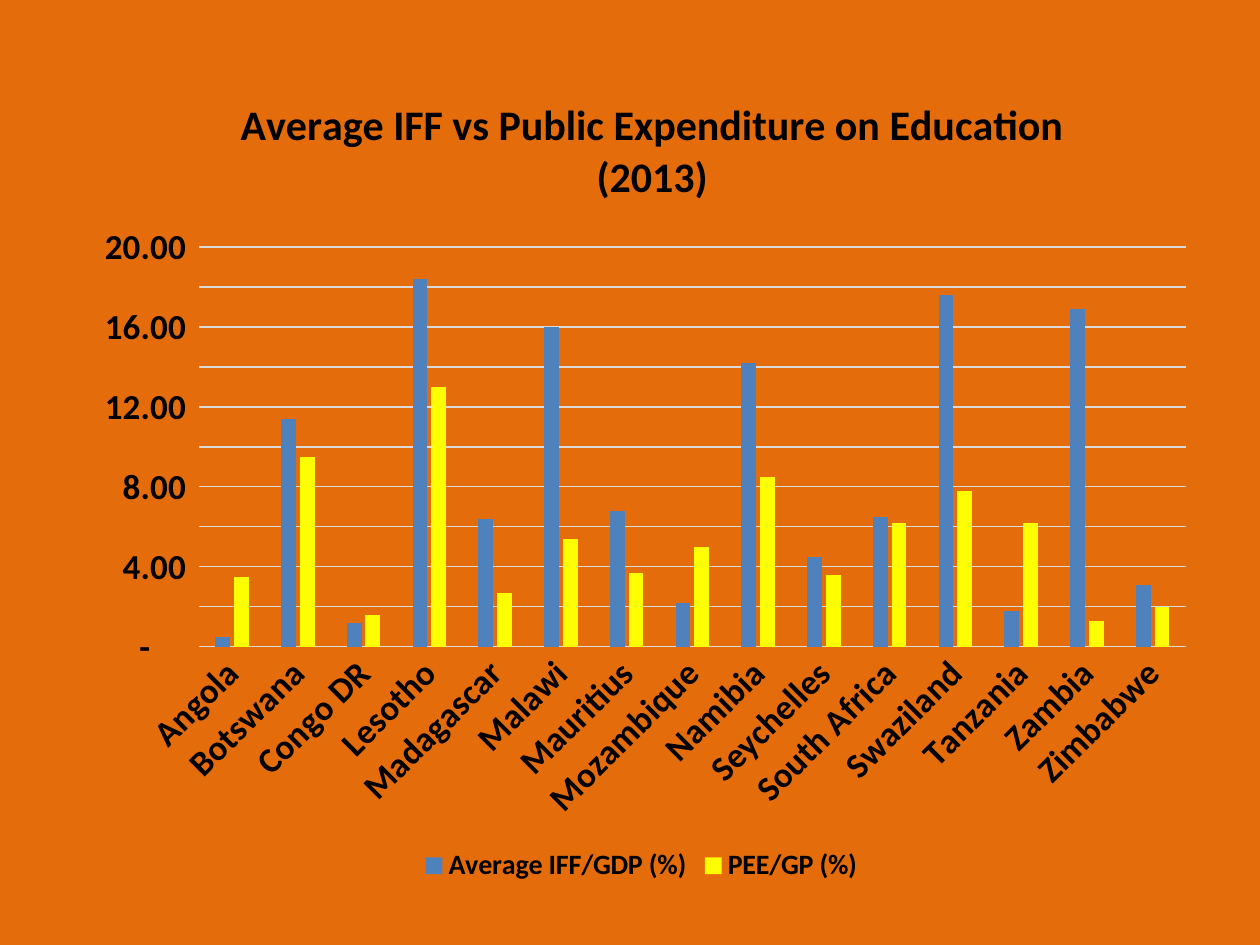
from lxml import etree
from pptx import Presentation
from pptx.chart.data import CategoryChartData
from pptx.dml.color import RGBColor
from pptx.enum.chart import XL_CHART_TYPE, XL_LEGEND_POSITION, XL_TICK_MARK
from pptx.oxml.ns import qn
from pptx.util import Cm, Pt

COLUMN_CLUSTERED = XL_CHART_TYPE.COLUMN_CLUSTERED
BOTTOM = XL_LEGEND_POSITION.BOTTOM
NO_TICK = XL_TICK_MARK.NONE

ORANGE = RGBColor(0xE4, 0x6C, 0x0A)
BLACK = RGBColor(0x00, 0x00, 0x00)
GREY = RGBColor(0xD9, 0xD9, 0xD9)
BLUE = RGBColor(0x4F, 0x81, 0xBD)
YELLOW = RGBColor(0xFF, 0xFF, 0x00)

TITLE = "Average IFF vs Public Expenditure on Education (2013)"
NUMBER_FORMAT = '_(* #,##0.00_);_(* \\(#,##0.00\\);_(* "-"??_);_(@_)'
COUNTRIES = [
    "Angola", "Botswana", "Congo DR", "Lesotho", "Madagascar",
    "Malawi", "Mauritius", "Mozambique", "Namibia", "Seychelles",
    "South Africa", "Swaziland", "Tanzania", "Zambia", "Zimbabwe",
]
SERIES = [
    ("Average IFF/GDP (%)", BLUE,
     [0.5, 11.4, 1.2, 18.4, 6.4, 16, 6.8, 2.2, 14.2, 4.5, 6.5, 17.6, 1.8, 16.9, 3.1]),
    ("PEE/GP (%)", YELLOW,
     [3.5, 9.5, 1.6, 13, 2.7, 5.4, 3.7, 5, 8.5, 3.6, 6.2, 7.8, 6.2, 1.3, 2]),
]


def style_font(font, size):
    font.name = "Calibri"
    font.size = Pt(size)
    font.bold = True
    font.color.rgb = BLACK


def style_line(line):
    line.color.rgb = GREY
    line.width = Pt(0.75)


def set_layout(parent, index, settings):
    layout = parent.find(qn("c:layout"))
    if layout is None:
        layout = etree.Element(qn("c:layout"))
        parent.insert(index, layout)
    manual = etree.SubElement(layout, qn("c:manualLayout"))
    for name, value in settings.items():
        etree.SubElement(manual, qn(f"c:{name}")).set("val", str(value))


def add_column_chart(slide):
    data = CategoryChartData(number_format="0.0")
    data.categories = COUNTRIES
    for name, _, values in SERIES:
        data.add_series(name, values)
    frame = slide.shapes.add_chart(
        COLUMN_CLUSTERED, Cm(1.5), Cm(1.12), Cm(22.86), Cm(16.79), data)
    chart = frame.chart
    style_font(chart.font, 20)
    plot = chart.plots[0]
    plot.gap_width = 219
    plot.overlap = -27
    plot.vary_by_categories = False
    for series, (_, color, _) in zip(plot.series, SERIES):
        series.format.fill.solid()
        series.format.fill.fore_color.rgb = color
        series.invert_if_negative = False
    return chart


def format_title(chart):
    text_frame = chart.chart_title.text_frame
    text_frame.text = TITLE
    style_font(text_frame.paragraphs[0].font, 24)
    chart.chart_title.include_in_layout = False
    set_layout(chart.chart_title._element, 1,
               {"xMode": "edge", "yMode": "edge", "x": 0.14, "y": 0.04})


def format_axes(chart):
    for axis in (chart.category_axis, chart.value_axis):
        axis.major_tick_mark = NO_TICK
        axis.minor_tick_mark = NO_TICK
        style_font(axis.tick_labels.font, 20)

    category_axis = chart.category_axis
    style_line(category_axis.format.line)
    body = category_axis._element.find(qn("c:txPr")).find(qn("a:bodyPr"))
    body.set("rot", "-2700000")
    body.set("vert", "horz")

    value_axis = chart.value_axis
    value_axis.minimum_scale = 0
    value_axis.maximum_scale = 20
    value_axis.major_unit = 2
    value_axis.format.line.fill.background()
    value_axis.has_major_gridlines = True
    style_line(value_axis.major_gridlines.format.line)
    value_axis.tick_labels.number_format = NUMBER_FORMAT
    value_axis.tick_labels.number_format_is_linked = False


def format_legend(chart):
    chart.has_legend = True
    chart.legend.position = BOTTOM
    chart.legend.include_in_layout = False
    style_font(chart.legend.font, 16)


def main():
    deck = Presentation()
    deck.slide_width = Cm(25.4)
    deck.slide_height = Cm(19.05)
    slide = deck.slides.add_slide(deck.slide_layouts[6])
    slide.background.fill.solid()
    slide.background.fill.fore_color.rgb = ORANGE

    chart = add_column_chart(slide)
    format_title(chart)
    format_axes(chart)
    format_legend(chart)
    plot_area = chart.category_axis._element.getparent()
    set_layout(plot_area, 0, {
        "layoutTarget": "inner", "xMode": "edge", "yMode": "edge",
        "x": 0.11, "y": 0.23, "w": 0.87, "h": 0.48})
    deck.save("out.pptx")


if __name__ == "__main__":
    main()
